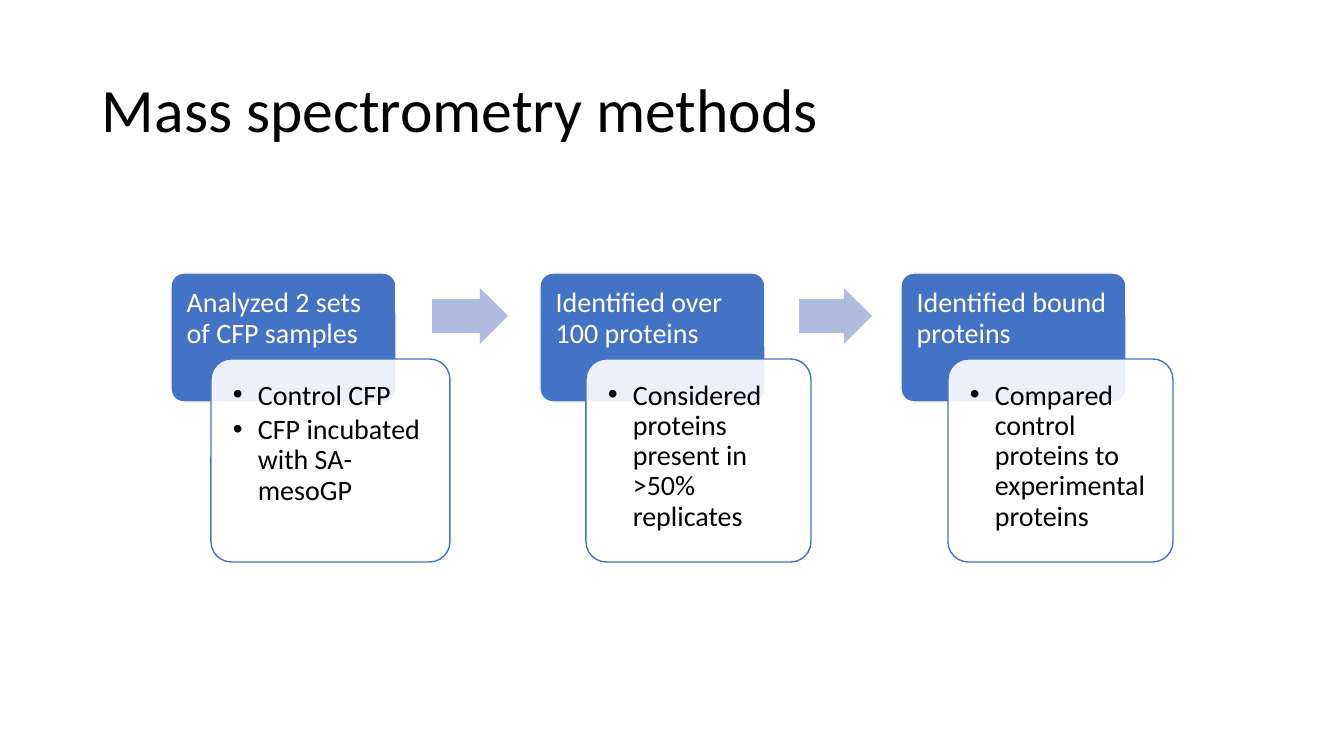
from lxml.etree import SubElement as Sub
from pptx import Presentation
from pptx.dml.color import RGBColor as RGB
from pptx.enum.shapes import MSO_SHAPE as Geo
from pptx.enum.text import MSO_ANCHOR as Anchor, PP_ALIGN as Align
from pptx.oxml.ns import qn
from pptx.util import Emu, Pt

# Theme: colours, font and type sizes
theme = dict(blue="4472C4", pale="B0BCDE", white="FFFFFF", black="000000",
             font="Calibri", title=44, text=20)


def px(*nums):
    return [Emu(round(n * 914400 / 100.8)) for n in nums]


def write(shape, lines, size, ink, pad, after=0, dots=False):
    frame = shape.text_frame
    frame.word_wrap = True
    (frame.margin_left, frame.margin_top,
     frame.margin_right, frame.margin_bottom) = px(*pad)
    for i, line in enumerate(lines):
        para = frame.add_paragraph() if i else frame.paragraphs[0]
        para.alignment = Align.LEFT
        para.line_spacing = 0.9
        para.space_after = Pt(after)
        if dots:
            props = para._p.get_or_add_pPr()
            props.set("marL", str(px(25)[0]))
            props.set("indent", str(px(-25)[0]))
            Sub(props, qn("a:buFont"), typeface="Arial")
            Sub(props, qn("a:buChar"), char="•")
        run = para.add_run()
        run.text = line
        run.font.name = theme["font"]
        run.font.size = Pt(size)
        run.font.color.rgb = RGB.from_string(theme[ink])


deck = Presentation()
deck.slide_width, deck.slide_height = px(1344, 756)
slide = deck.slides.add_slide(deck.slide_layouts[6])
shapes = slide.shapes

# Title
title = shapes.add_textbox(*px(92, 40, 1159, 146))
write(title, ["Mass spectrometry methods"], theme["title"], "black", (10, 5, 10, 5))
title.text_frame.vertical_anchor = Anchor.MIDDLE

# Steps: head left, head text, body left, body width, body lines
steps = [
    (171, "Analyzed 2 sets of CFP samples", 211, 239,
     ["Control CFP", "CFP incubated with SA-mesoGP"]),
    (540, "Identified over 100 proteins", 586, 225,
     ["Considered proteins present in >50% replicates"]),
    (901, "Identified bound proteins", 948, 225,
     ["Compared control proteins to experimental proteins"]),
]
for left, name, inner, wide, lines in steps:
    # Head and the card that overlaps it
    head = shapes.add_shape(Geo.ROUNDED_RECTANGLE, *px(left, 273, 225, 129))
    card = shapes.add_shape(Geo.ROUNDED_RECTANGLE, *px(inner, 359, wide, 203))
    for box, fill, line in ((head, "blue", "white"), (card, "white", "blue")):
        box.adjustments[0] = 0.1
        box.shadow.inherit = False
        box.fill.solid()
        box.fill.fore_color.rgb = RGB.from_string(theme[fill])
        box.line.color.rgb = RGB.from_string(theme[line])
        box.line.width = Pt(1)
        box.text_frame.vertical_anchor = Anchor.TOP
    tint = card._element.spPr.find(qn("a:solidFill"))[0]
    Sub(tint, qn("a:alpha"), val="90000")
    write(head, [name], theme["text"], "white", (12, 12, 12, 8), 7)
    write(card, lines, theme["text"], "black", (16, 16, 16, 16), 3, True)

# Arrows between the steps
for left, wide in ((432, 76), (799, 73)):
    arrow = shapes.add_shape(Geo.RIGHT_ARROW, *px(left, 288, wide, 56))
    arrow.adjustments[0] = 0.6
    arrow.adjustments[1] = 0.5
    arrow.shadow.inherit = False
    arrow.fill.solid()
    arrow.fill.fore_color.rgb = RGB.from_string(theme["pale"])
    arrow.line.fill.background()

deck.save("out.pptx")
